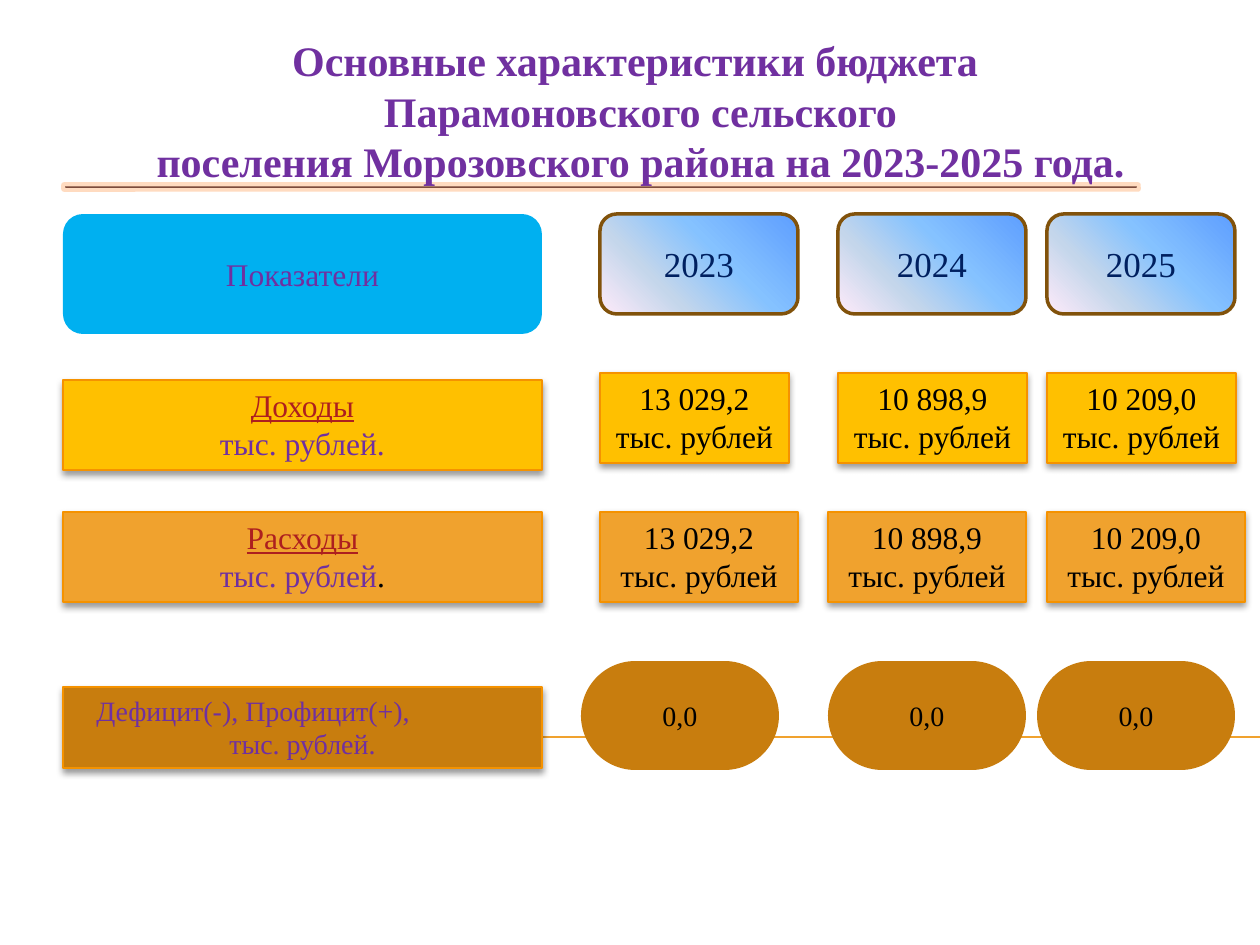
import dataclasses

import pptx
import pptx.dml.color
import pptx.enum.shapes
import pptx.enum.text
import pptx.oxml
import pptx.oxml.ns
import pptx.util
from lxml import etree

PX = 914400 / 126
SHAPES = pptx.enum.shapes.MSO_SHAPE
ALIGN = pptx.enum.text.PP_ALIGN
ANCHOR = pptx.enum.text.MSO_ANCHOR


@dataclasses.dataclass(frozen=True)
class Theme:
    font: str = "Times New Roman"
    purple: str = "7030A0"
    navy: str = "002060"
    red: str = "AD1F1F"
    black: str = "000000"
    sky: str = "00B0F0"
    yellow: str = "FFC000"
    orange: str = "F0A22E"
    brown: str = "C87D0E"
    card_edge: str = "F59200"
    year_edge: str = "81520B"
    rule_edge: str = "FFDBC0"
    rule_stops: tuple = ((0, "7C4B3B"), (50, "FFDBC0"), (100, "FFEDE0"))
    year_stops: tuple = ((0, "5E9EFF"), (40, "85C2FF"), (70, "C4D6EB"), (100, "FFEBFA"))
    title_size: int = 24
    year_size: int = 20
    body_size: int = 18
    small_size: int = 16


THEME = Theme()


def emu(px):
    return pptx.util.Emu(round(px * PX))


def rgb(color):
    return pptx.dml.color.RGBColor.from_string(color)


def qn(tag):
    return pptx.oxml.ns.qn(tag)


def add_text(frame, text, *, size, color, bold=False, underline=False,
             align=ALIGN.CENTER, indent=0, new_paragraph=True):
    """Append text as a paragraph, or as a run of the last paragraph."""
    paragraph = frame.paragraphs[-1]
    if new_paragraph and paragraph.runs:
        paragraph = frame.add_paragraph()
    paragraph.alignment = align
    if indent:
        properties = paragraph._p.get_or_add_pPr()
        properties.set("marL", "0")
        properties.set("indent", str(emu(indent)))
    run = paragraph.add_run()
    run.text = text
    run.font.name = THEME.font
    run.font.size = pptx.util.Pt(size)
    run.font.color.rgb = rgb(color)
    run.font.bold = bold
    run.font.underline = underline


def set_gradient(shape, stops, direction):
    """Fill with stops, along an a:lin or a:path element given as direction."""
    shape.fill.gradient()
    gradient = shape._element.spPr.find(qn("a:gradFill"))
    for child in list(gradient):
        gradient.remove(child)
    stop_list = etree.SubElement(gradient, qn("a:gsLst"))
    for position, color in stops:
        stop = etree.SubElement(stop_list, qn("a:gs"), pos=str(position * 1000))
        etree.SubElement(stop, qn("a:srgbClr"), val=color)
    gradient.append(direction)


def add_soft_shadow(shape):
    effects = shape._element.spPr.find(qn("a:effectLst"))
    shadow = etree.SubElement(effects, qn("a:outerShdw"), blurRad="50800",
                              dist="25400", dir="5400000", rotWithShape="0")
    color = etree.SubElement(shadow, qn("a:srgbClr"), val=THEME.black)
    etree.SubElement(color, qn("a:alpha"), val="40000")


def add_block(slide, box, kind, fill=None, edge=None, edge_width=1, anchor=ANCHOR.MIDDLE):
    shape = slide.shapes.add_shape(kind, *map(emu, box))
    shape.shadow.inherit = False
    if fill:
        shape.fill.solid()
        shape.fill.fore_color.rgb = rgb(fill)
    if edge:
        shape.line.color.rgb = rgb(edge)
        shape.line.width = pptx.util.Pt(edge_width)
    else:
        shape.line.fill.background()
    shape.text_frame.word_wrap = True
    shape.text_frame.vertical_anchor = anchor
    return shape


def add_card(slide, box, fill):
    card = add_block(slide, box, SHAPES.RECTANGLE, fill, THEME.card_edge, anchor=ANCHOR.TOP)
    add_soft_shadow(card)
    return card.text_frame


def add_title(slide, box):
    left, top, width, height = box
    rule = add_block(slide, (left - 1, top + 156, width - 15, 6),
                     SHAPES.ROUNDED_RECTANGLE, edge=THEME.rule_edge, edge_width=2)
    center = etree.Element(qn("a:path"), path="rect")
    etree.SubElement(center, qn("a:fillToRect"), l="50000", t="50000", r="50000", b="50000")
    set_gradient(rule, THEME.rule_stops, center)

    title = slide.shapes.add_textbox(*map(emu, box)).text_frame
    title.word_wrap = True
    title.vertical_anchor = ANCHOR.MIDDLE
    for line in ("Основные характеристики бюджета ", "Парамоновского сельского",
                 "поселения Морозовского района на 2023-2025 года."):
        add_text(title, line, size=THEME.title_size, color=THEME.purple, bold=True, indent=62)


def add_header_row(slide, box, label_width, years):
    left, top, _, height = box
    label = add_block(slide, (left, top, label_width, height),
                      SHAPES.ROUNDED_RECTANGLE, THEME.sky)
    add_text(label.text_frame, "Показатели", size=THEME.body_size, color=THEME.purple)
    for year, offset, width in years:
        cell = add_block(slide, (left + offset, top, width, 100), SHAPES.ROUNDED_RECTANGLE,
                         edge=THEME.year_edge, edge_width=2)
        set_gradient(cell, THEME.year_stops, etree.Element(qn("a:lin"), ang="8100000", scaled="0"))
        add_text(cell.text_frame, year, size=THEME.year_size, color=THEME.navy)


def add_amount_row(slide, box, label_width, name, fill, amounts, cell_width,
                   rise=0, dot_color=THEME.purple):
    """Label card, then amount cards raised above it by rise."""
    left, top, _, height = box
    label = add_card(slide, (left, top, label_width, height), fill)
    add_text(label, name, size=THEME.body_size, color=THEME.red, underline=True)
    add_text(label, "тыс. рублей", size=THEME.body_size, color=THEME.purple)
    add_text(label, ".", size=THEME.body_size, color=dot_color, new_paragraph=False)
    for amount, offset in amounts:
        cell = add_card(slide, (left + offset, top - rise, cell_width, height), fill)
        for line in (amount, "тыс. рублей"):
            add_text(cell, line, size=THEME.body_size, color=THEME.black)


def add_balance_row(slide, box, label_width, balances):
    left, top, width, height = box
    axis = slide.shapes.add_connector(pptx.enum.shapes.MSO_CONNECTOR.STRAIGHT,
                                      emu(left + 8), emu(top + 76),
                                      emu(left + width), emu(top + 76))
    axis.line.color.rgb = rgb(THEME.orange)
    axis.line.width = pptx.util.Pt(0.75)
    etree.SubElement(axis._element.spPr, qn("a:effectLst"))

    label = add_card(slide, (left, top + 26, label_width, 81), THEME.brown)
    add_text(label, "Дефицит(-), Профицит(+),", size=THEME.small_size,
             color=THEME.purple, align=ALIGN.LEFT, indent=21)
    add_text(label, "тыс. рублей.", size=THEME.small_size, color=THEME.purple)
    for balance, offset in balances:
        pill = add_block(slide, (left + offset, top, 198, height),
                         SHAPES.ROUNDED_RECTANGLE, THEME.brown)
        pill.adjustments[0] = 0.5
        add_text(pill.text_frame, balance, size=THEME.small_size, color=THEME.black)


def main():
    deck = pptx.Presentation()
    deck.slide_width, deck.slide_height = emu(1260), emu(945)
    slide = deck.slides.add_slide(deck.slide_layouts[6])
    left, width, label_width = 63, 1197, 479
    amounts = ("13 029,2", "10 898,9", "10 209,0")

    add_title(slide, (64, 28, 1091, 165))
    add_header_row(slide, (left, 214, width, 120), label_width,
                   (("2023", 537, 198), ("2024", 775, 188), ("2025", 984, 188)))
    add_amount_row(slide, (left, 380, width, 90), label_width, "Доходы", THEME.yellow,
                   zip(amounts, (537, 775, 984)), 189, rise=7)
    add_amount_row(slide, (left, 512, width, 90), label_width, "Расходы", THEME.orange,
                   zip(amounts, (537, 765, 984)), 198, dot_color=THEME.black)
    add_balance_row(slide, (left, 661, width, 109), label_width,
                    (("0,0", offset) for offset in (518, 765, 974)))
    deck.save("out.pptx")


if __name__ == "__main__":
    main()
